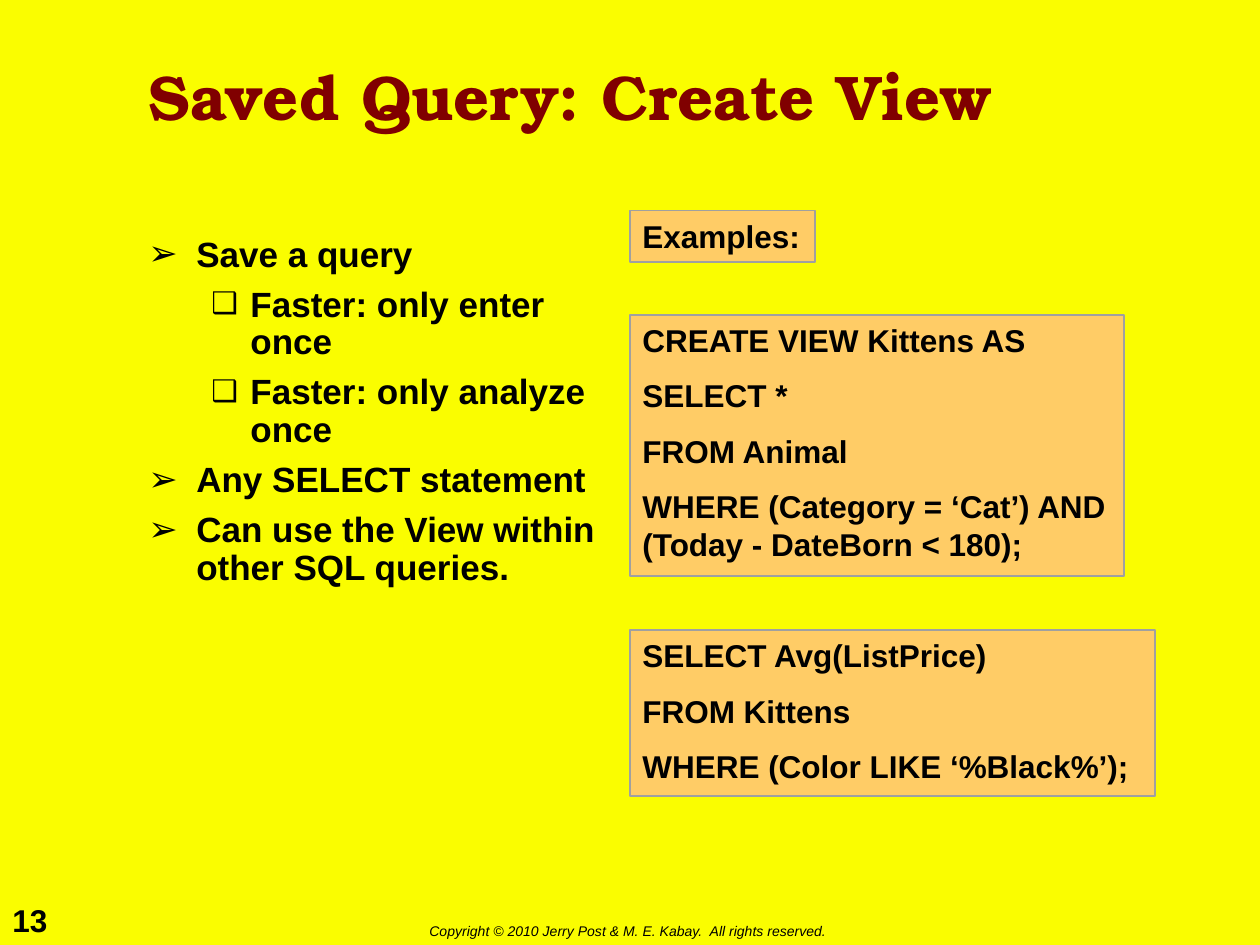
"""Build the "Saved Query: Create View" slide."""
from dataclasses import dataclass

from lxml.etree import SubElement
from pptx import Presentation
from pptx.dml.color import RGBColor as RGB
from pptx.enum.shapes import MSO_SHAPE as SHAPE
from pptx.enum.text import MSO_ANCHOR as ANCHOR, PP_ALIGN as ALIGN
from pptx.oxml.ns import qn
from pptx.util import Inches, Pt


@dataclass(frozen=True)
class Theme:
    page: RGB = RGB(0xFA, 0xFD, 0x00)
    title: RGB = RGB(0x80, 0x00, 0x00)
    text: RGB = RGB(0x00, 0x00, 0x00)
    panel: RGB = RGB(0xFF, 0xCC, 0x66)
    border: RGB = RGB(0xA0, 0xA0, 0xA0)
    title_font: str = "TeX Gyre Bonum"
    body_font: str = "Arial"
    title_size: int = 36
    bullet_size: int = 20
    code_size: int = 18
    footer_size: int = 8


T = Theme()


def write(tf, lines, size, gap=0, font=T.body_font, color=T.text, bold=True, italic=False):
    for i, line in enumerate(lines):
        p = tf.add_paragraph() if i else tf.paragraphs[0]
        p.text = line
        p.alignment = ALIGN.LEFT
        if i and gap:
            p.space_before = Pt(gap)
        for r in p.runs:
            r.font.name, r.font.size = font, Pt(size)
            r.font.bold, r.font.italic = bold, italic
            r.font.color.rgb = color


def add_text(left, top, width, height, wrap=True):
    box = s.shapes.add_textbox(Inches(left), Inches(top), Inches(width), Inches(height))
    box.text_frame.word_wrap = wrap
    return box.text_frame


prs = Presentation()
prs.slide_width, prs.slide_height = Inches(10), Inches(7.5)
s = prs.slides.add_slide(prs.slide_layouts[6])
s.background.fill.solid()
s.background.fill.fore_color.rgb = T.page

write(add_text(0, 7.1, 0.5, 0.4, wrap=False), ["13"], T.code_size)
write(add_text(3.31, 7.27, 3.46, 0.24, wrap=False),
      ["Copyright © 2010 Jerry Post & M. E. Kabay.  All rights reserved."],
      T.footer_size, bold=False, italic=True)

tf = add_text(1.08, 0.17, 7.83, 1.25)
tf.vertical_anchor = ANCHOR.MIDDLE
write(tf, ["Saved Query: Create View"], T.title_size, font=T.title_font, color=T.title)
tf.paragraphs[0].line_spacing = 0.9

bullets = [
    (0, "Save a query"),
    (1, "Faster: only enter once"),
    (1, "Faster: only analyze once"),
    (0, "Any SELECT statement"),
    (0, "Can use the View within other SQL queries."),
]
bullet_styles = [("➢", 0.38, 0.38, 100), ("❑", 0.81, 0.31, 85)]
tf = add_text(1.08, 1.83, 3.84, 5.08)
write(tf, [text for level, text in bullets], T.bullet_size, gap=7)
for p, (level, text) in zip(tf.paragraphs, bullets):
    char, margin, hang, percent = bullet_styles[level]
    p.level = level
    p.line_spacing = 0.9
    pPr = p._p.get_or_add_pPr()
    pPr.set("marL", str(Inches(margin)))
    pPr.set("indent", str(-Inches(hang)))
    color = SubElement(pPr, qn("a:buClr"))
    SubElement(color, qn("a:srgbClr"), val=str(T.text))
    SubElement(pPr, qn("a:buSzPct"), val=str(percent * 1000))
    SubElement(pPr, qn("a:buFont"), typeface=T.body_font)
    SubElement(pPr, qn("a:buChar"), char=char)

panels = [
    (1.67, 1.47, 0.41, False, ["Examples:"]),
    (2.5, 3.92, 2.07, True, [
        "CREATE VIEW Kittens AS",
        "SELECT *",
        "FROM Animal",
        "WHERE (Category = ‘Cat’) AND (Today - DateBorn < 180);",
    ]),
    (5, 4.17, 1.32, True, [
        "SELECT Avg(ListPrice)",
        "FROM Kittens",
        "WHERE (Color LIKE ‘%Black%’);",
    ]),
]
for top, width, height, wrap, lines in panels:
    sp = s.shapes.add_shape(SHAPE.RECTANGLE, Inches(5), Inches(top), Inches(width), Inches(height))
    sp.shadow.inherit = False
    sp.fill.solid()
    sp.fill.fore_color.rgb = T.panel
    sp.line.color.rgb = T.border
    sp.line.width = Pt(1)
    tf = sp.text_frame
    tf.word_wrap = wrap
    tf.vertical_anchor = ANCHOR.TOP
    write(tf, lines, T.code_size, gap=10)

prs.save("out.pptx")
